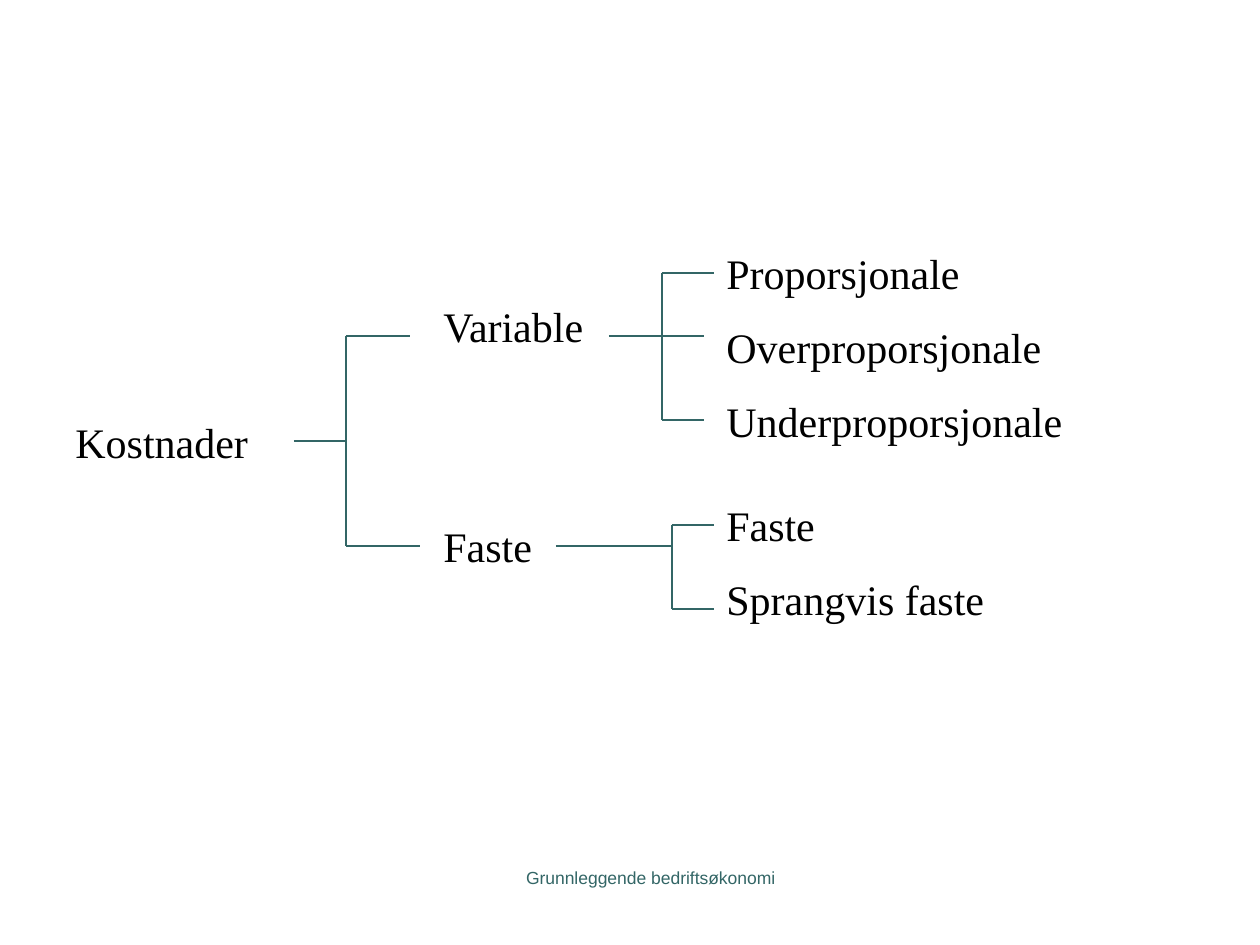
from lxml import etree
from pptx import Presentation
from pptx import util as u
from pptx.dml.color import RGBColor
from pptx.enum import shapes, text
from pptx.oxml.ns import qn

EMU_PER_PX = 914400 / 126


def px(length):
    return u.Emu(round(length * EMU_PER_PX))


def color(value):
    return RGBColor.from_string(value)


class TreeSlide:
    ink = "000000"
    accent = "336666"
    label_font = "Times New Roman"
    footer_font = "Arial"

    def __init__(self, slide):
        self.slide = slide

    def add_text(self, left, top, width, words, font, size, fill, align):
        box = self.slide.shapes.add_textbox(px(left), px(top), px(width), px(63))
        frame = box.text_frame
        frame.word_wrap = True
        frame.text = words
        paragraph = frame.paragraphs[0]
        paragraph.alignment = align
        run = paragraph.runs[0]
        run.font.name = font
        run.font.size = u.Pt(size)
        run.font.color.rgb = color(fill)

    def label(self, left, top, width, words):
        self.add_text(left, top, width, words, self.label_font, 24, self.ink,
                      text.PP_ALIGN.LEFT)

    def footer(self, left, top, width, words):
        self.add_text(left, top, width, words, self.footer_font, 10, self.accent,
                      text.PP_ALIGN.CENTER)

    def line(self, x1, y1, x2, y2):
        connector = self.slide.shapes.add_connector(
            shapes.MSO_CONNECTOR.STRAIGHT, px(x1), px(y1), px(x2), px(y2))
        connector.line.color.rgb = color(self.accent)
        connector.line.width = u.Pt(0.75)
        etree.SubElement(connector._element.spPr, qn("a:effectLst"))

    def bracket(self, stem_x, stem_y, trunk_x, branches):
        """Draw a stem to the trunk, then one branch per (end x, y)."""
        self.line(stem_x, stem_y, trunk_x, stem_y)
        for end_x, y in branches:
            if y != stem_y:
                self.line(trunk_x, stem_y, trunk_x, y)
            self.line(trunk_x, y, end_x, y)


def main():
    deck = Presentation()
    deck.slide_width, deck.slide_height = px(1260), px(945)
    tree = TreeSlide(deck.slides.add_slide(deck.slide_layouts[6]))

    # Footer
    tree.footer(451, 861, 399, "Grunnleggende bedriftsøkonomi")

    # Costs and their two main kinds
    tree.label(63, 410, 220, "Kostnader")
    tree.label(431, 294, 252, "Variable")
    tree.label(431, 514, 220, "Faste")
    tree.bracket(294, 441, 346, [(410, 336), (420, 546)])

    # Subtypes: each group stacks its labels at the same pitch
    leaf_x, pitch = 714, 74
    subtypes = [
        (241, [("Proporsjonale", 315), ("Overproporsjonale", 368),
               ("Underproporsjonale", 431)]),
        (493, [("Faste", 242), ("Sprangvis faste", 336)]),
    ]
    for top, leaves in subtypes:
        for row, (words, width) in enumerate(leaves):
            tree.label(leaf_x, top + row * pitch, width, words)

    # Brackets from the main kinds to their subtypes
    tree.bracket(609, 336, 662, [(714, 273), (704, 336), (704, 420)])
    tree.bracket(556, 546, 672, [(714, 525), (714, 609)])

    deck.save("out.pptx")


if __name__ == "__main__":
    main()
